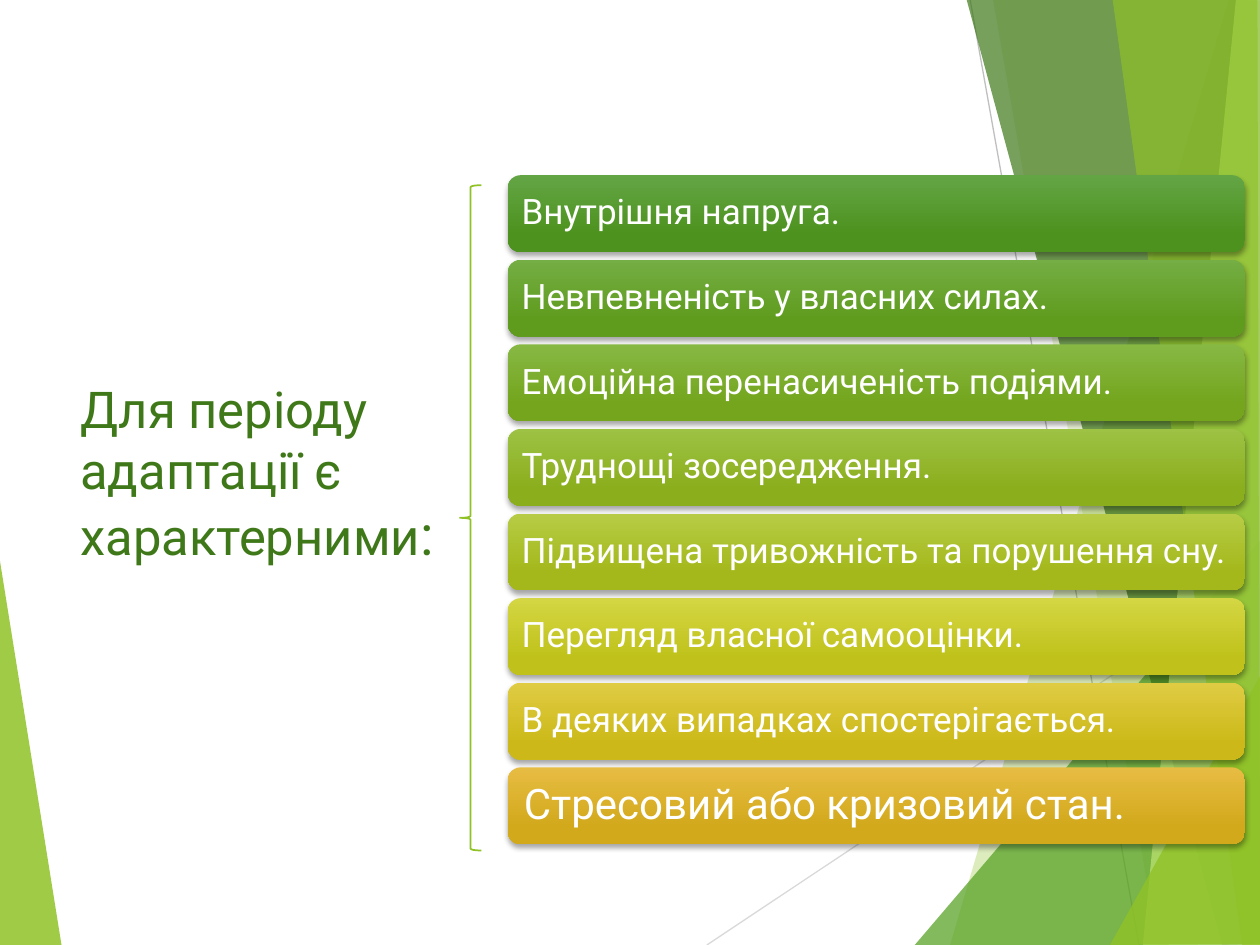
from dataclasses import dataclass

import pptx
import pptx.dml.color
import pptx.enum.shapes
import pptx.enum.text
import pptx.oxml
import pptx.oxml.ns
import pptx.util
from pptx.util import Inches

FONT = "Roboto"
COLORS = {
    "lime": "90C226",
    "green": "54A021",
    "dark": "3F7819",
    "pale": "C0E474",
    "silver": "D9D9D9",
    "gray": "BFBFBF",
    "white": "FFFFFF",
    "shadow": "000000",
}


@dataclass
class Facet:
    color: str
    opacity: int
    points: list[tuple[float, float]]


@dataclass
class Ray:
    color: str
    start: tuple[float, float]
    end: tuple[float, float]


@dataclass
class Bar:
    text: str
    top_color: str
    bottom_color: str
    size: int = 20
    inset: float = 0.08


LEFT_FACET = Facet("lime", 85, [(-0.01, 4.39), (0.49, 7.51), (-0.01, 7.5)])
RAYS = [
    Ray("silver", (5.61, 7.5), (10.01, 4.57)),
    Ray("gray", (7.7, 0), (9.04, 7.5)),
]
RIGHT_FACETS = [
    Facet("lime", 30, [(9.75, 0), (7.54, 7.5), (10.02, 7.51), (10.01, 0.01)]),
    Facet("lime", 20, [(7.88, -0.01), (9.19, 7.5), (10.01, 7.5), (10.01, -0.01)]),
    Facet("green", 72, [(7.26, 7.5), (10, 4.29), (10.01, 7.5)]),
    Facet("dark", 70, [(7.67, -0.01), (9.7, 7.5), (10.01, 7.49), (10.01, -0.01)]),
    Facet("pale", 70, [(9.81, -0.01), (9.07, 7.5), (10.01, 7.5), (10, -0.01)]),
    Facet("lime", 65, [(8.83, -0.01), (9.86, 7.5), (10, 7.5), (9.98, -0.01)]),
    Facet("lime", 80, [(8.81, 7.5), (10.01, 5.35), (10.01, 7.49)]),
]
BARS = [
    Bar("Внутрішня напруга.", "63A545", "4D921E"),
    Bar("Невпевненість у власних силах.", "74AE44", "5F9C1E"),
    Bar("Емоційна перенасиченість подіями.", "87B844", "74A51D"),
    Bar("Труднощі зосередження.", "9DC244", "8BAE1D"),
    Bar("Підвищена тривожність та порушення сну.", "B7CC44", "A4B81C"),
    Bar("Перегляд власної самооцінки.", "D4D643", "C0C21B"),
    Bar("В деяких випадках спостерігається.", "E0CC43", "CCB919"),
    Bar("Стресовий або кризовий стан.", "E7BC43", "D2A91B", 24, 0.1),
]
BAR_LEFT, BAR_TOP, BAR_WIDTH, BAR_HEIGHT = 4.03, 1.39, 5.85, 0.61
BAR_PITCH = (6.09 - BAR_TOP) / (len(BARS) - 1)


def rgb(value: str) -> pptx.dml.color.RGBColor:
    return pptx.dml.color.RGBColor.from_string(value)


def apply(target, values: dict) -> None:
    for name, value in values.items():
        setattr(target, name, value)


def add_span(para, text: str, size: int, color: str) -> None:
    span = para.add_run()
    span.text = text
    apply(span.font, {"name": FONT, "size": pptx.util.Pt(size)})
    span.font.color.rgb = rgb(COLORS[color])


def draw_facet(page, facet: Facet) -> None:
    points = [(Inches(x), Inches(y)) for x, y in facet.points]
    builder = page.shapes.build_freeform(*points[0])
    builder.add_line_segments(points[1:], close=True)
    shape = builder.convert_to_shape()
    shape.shadow.inherit = False
    shape.line.fill.background()
    shape.fill.solid()
    shape.fill.fore_color.rgb = rgb(COLORS[facet.color])
    color = shape._element.spPr.find(".//" + pptx.oxml.ns.qn("a:srgbClr"))
    color.append(pptx.oxml.parse_xml(
        f'<a:alpha {pptx.oxml.ns.nsdecls("a")} val="{facet.opacity * 1000}"/>'))


def draw_ray(page, ray: Ray) -> None:
    line = page.shapes.add_connector(
        pptx.enum.shapes.MSO_CONNECTOR.STRAIGHT,
        *(Inches(value) for value in ray.start + ray.end))
    line.line.color.rgb = rgb(COLORS[ray.color])
    line.line.width = pptx.util.Pt(0.75)
    line._element.spPr.append(pptx.oxml.parse_xml(
        f'<a:effectLst {pptx.oxml.ns.nsdecls("a")}/>'))


def draw_title(page) -> None:
    box = page.shapes.add_textbox(Inches(0.54), Inches(1.51), Inches(3.13), Inches(4.48))
    apply(box.text_frame, {
        "word_wrap": True,
        "vertical_anchor": pptx.enum.text.MSO_ANCHOR.MIDDLE,
    })
    para = box.text_frame.paragraphs[0]
    add_span(para, "Для періоду адаптації є характерними", 29, "dark")
    add_span(para, ":", 32, "dark")


def add_shadow(shape) -> None:
    shape.shadow.inherit = False
    effects = shape._element.spPr.find(pptx.oxml.ns.qn("a:effectLst"))
    effects.append(pptx.oxml.parse_xml(
        f'<a:outerShdw {pptx.oxml.ns.nsdecls("a")} blurRad="{pptx.util.Pt(3)}" '
        f'dist="{pptx.util.Pt(2)}" dir="5400000" rotWithShape="0">'
        f'<a:srgbClr val="{COLORS["shadow"]}"><a:alpha val="35000"/></a:srgbClr>'
        '</a:outerShdw>'))


def draw_bar(page, bar: Bar, top: float) -> None:
    shape = page.shapes.add_shape(
        pptx.enum.shapes.MSO_SHAPE.ROUNDED_RECTANGLE,
        Inches(BAR_LEFT), Inches(top), Inches(BAR_WIDTH), Inches(BAR_HEIGHT))
    shape.line.fill.background()
    shape.fill.gradient()
    shape.fill.gradient_angle = 270
    stops = [(0, bar.top_color), (0.78, bar.bottom_color)]
    for stop, (position, color) in zip(shape.fill.gradient_stops, stops):
        stop.position = position
        stop.color.rgb = rgb(color)
    add_shadow(shape)
    apply(shape.text_frame, {
        "word_wrap": True,
        "vertical_anchor": pptx.enum.text.MSO_ANCHOR.MIDDLE,
        "margin_left": Inches(bar.inset),
        "margin_right": Inches(bar.inset),
    })
    para = shape.text_frame.paragraphs[0]
    apply(para, {"alignment": pptx.enum.text.PP_ALIGN.LEFT, "line_spacing": 0.9})
    add_span(para, bar.text, bar.size, "white")


def draw_brace(page) -> None:
    brace = page.shapes.add_shape(
        pptx.enum.shapes.MSO_SHAPE.LEFT_BRACE,
        Inches(3.65), Inches(1.47), Inches(0.17), Inches(5.28))
    brace.shadow.inherit = False
    brace.fill.background()
    brace.line.color.rgb = rgb(COLORS["lime"])
    brace.line.width = pptx.util.Pt(1)


def main() -> None:
    deck = pptx.Presentation()
    apply(deck, {"slide_width": Inches(10), "slide_height": Inches(7.5)})
    page = deck.slides.add_slide(deck.slide_layouts[6])
    draw_facet(page, LEFT_FACET)
    for ray in RAYS:
        draw_ray(page, ray)
    for facet in RIGHT_FACETS:
        draw_facet(page, facet)
    draw_title(page)
    for index, bar in enumerate(BARS):
        draw_bar(page, bar, BAR_TOP + index * BAR_PITCH)
    draw_brace(page)
    deck.save("out.pptx")


if __name__ == "__main__":
    main()
